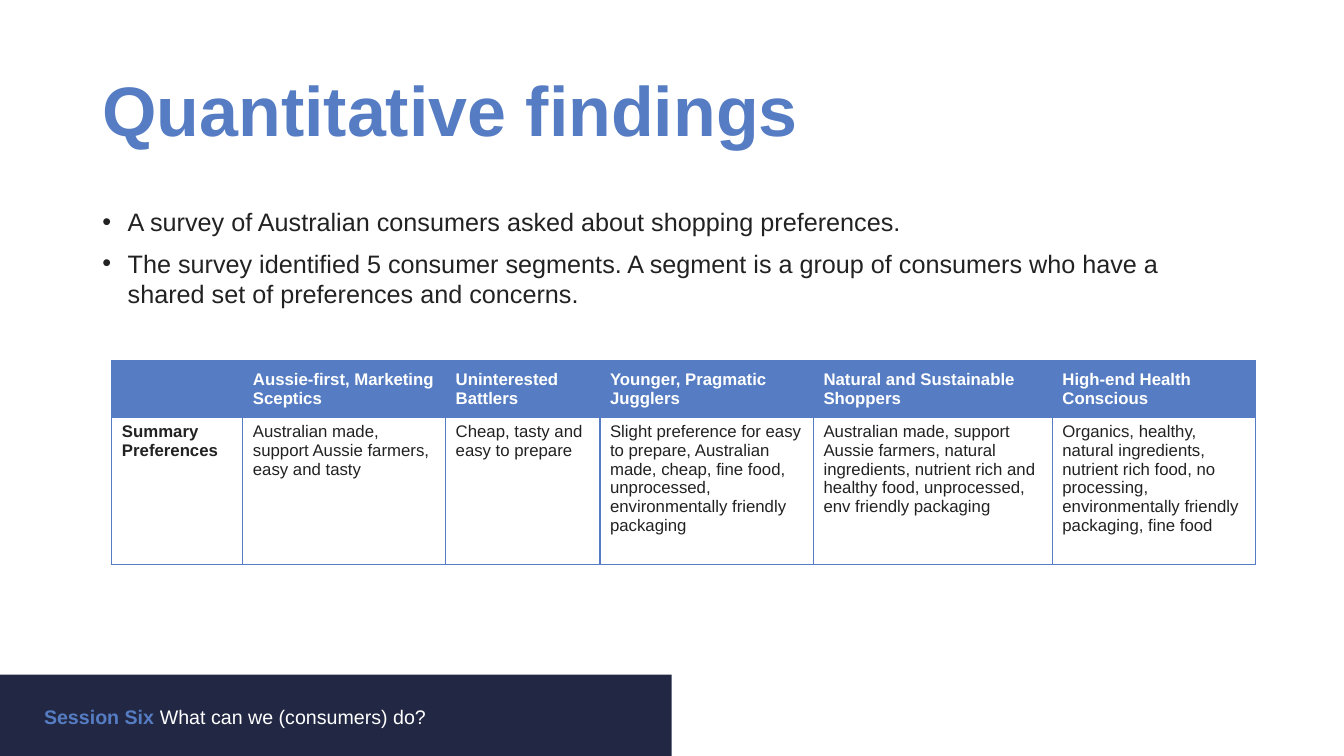
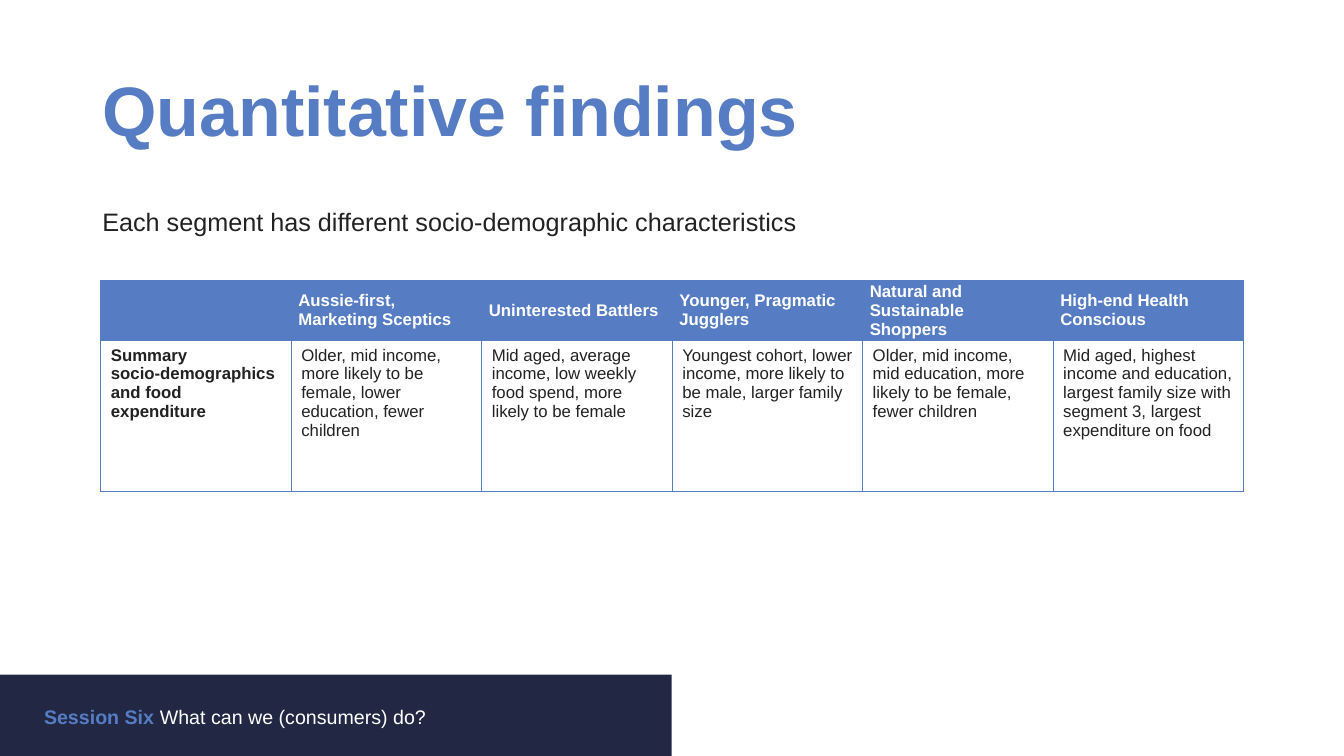
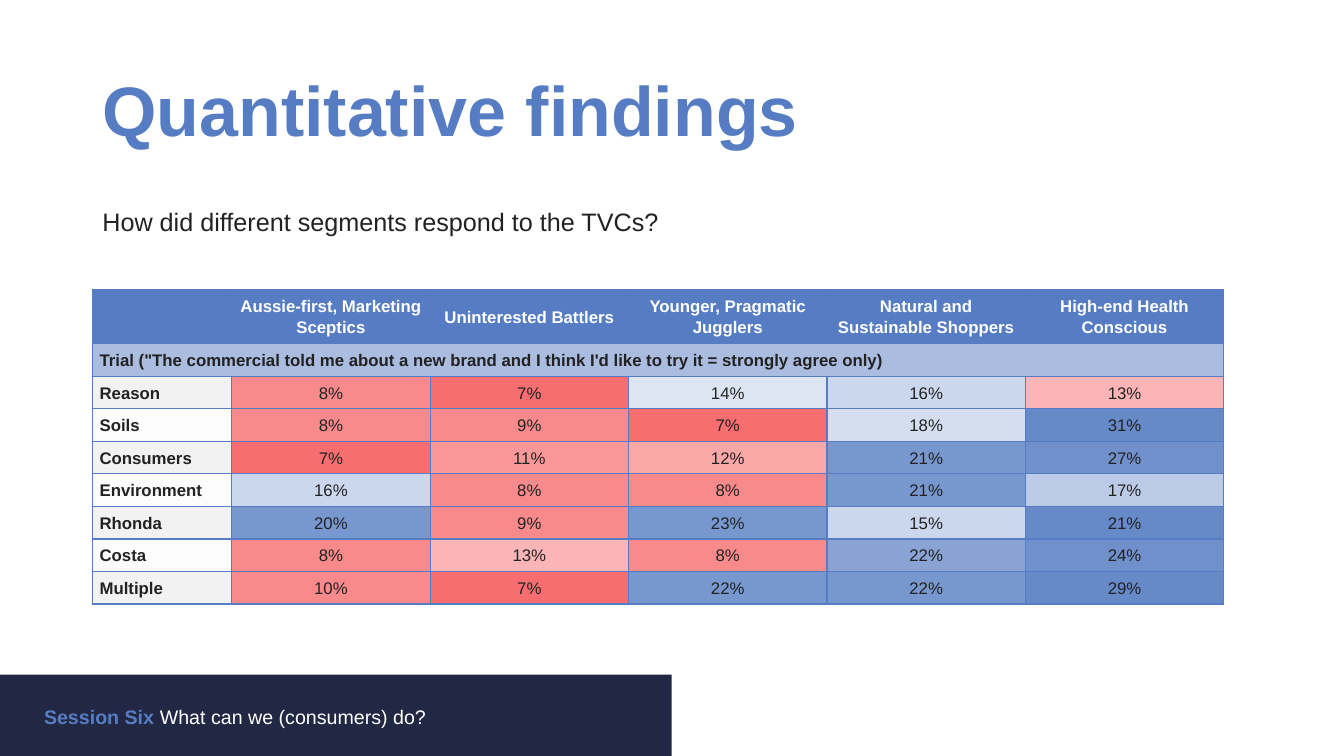
import copy
from dataclasses import dataclass
from typing import NamedTuple, Optional

import pptx
import pptx.dml.color
import pptx.enum.shapes
import pptx.enum.text
import pptx.oxml
import pptx.oxml.ns
import pptx.util
from lxml import etree

Cm = pptx.util.Cm
Pt = pptx.util.Pt
qn = pptx.oxml.ns.qn
ANCHOR = pptx.enum.text.MSO_ANCHOR
ALIGN = pptx.enum.text.PP_ALIGN


# Theme: colours, font and type sizes
@dataclass(frozen=True)
class Theme:
    blue: str = "567DC3"
    navy: str = "222844"
    red: str = "F86D6F"
    grey: str = "F2F2F2"
    ink: str = "222222"
    white: str = "FFFFFF"
    font: str = "Arial"
    title: int = 50
    body: int = 18
    footer: int = 14
    cell: int = 12
    border: int = 1


THEME = Theme()


class Box(NamedTuple):
    left: float
    top: float
    width: float
    height: float


class Fill(NamedTuple):
    color: str
    alpha: int = 100


@dataclass(frozen=True)
class Cell:
    text: str = ""
    fill: Optional[Fill] = None
    color: str = THEME.ink
    bold: bool = False
    centred: bool = False
    middle: bool = False
    tight: bool = False
    spacing: float = 1.0
    span: int = 1


@dataclass(frozen=True)
class Grid:
    left: float
    top: float
    cols: list[float]
    rows: list[float]
    cells: list[list[Cell]]


@dataclass(frozen=True)
class Page:
    body: list[str]
    grid: Grid
    bulleted: bool = False


# Text helpers
def style_run(r, size: int, color: str, bold: bool = False) -> None:
    r.font.name = THEME.font
    r.font.size = Pt(size)
    r.font.bold = bold
    r.font.color.rgb = pptx.dml.color.RGBColor.from_string(color)


def add_text_frame(slide, box: Box):
    sp = slide.shapes.add_textbox(*map(Cm, box))
    tf = sp.text_frame
    tf.word_wrap = True
    return tf


def add_bullet(p) -> None:
    pPr = p._p.get_or_add_pPr()
    pPr.set("marL", str(Cm(0.64)))
    pPr.set("indent", str(-Cm(0.64)))
    etree.SubElement(pPr, qn("a:buFont")).set("typeface", THEME.font)
    etree.SubElement(pPr, qn("a:buChar")).set("char", "•")


# Parts shared by all slides
def add_footer(slide) -> None:
    sp = slide.shapes.add_shape(
        pptx.enum.shapes.MSO_SHAPE.RECTANGLE, Cm(0), Cm(17), Cm(16.93), Cm(2.05))
    sp.shadow.inherit = False
    sp.fill.solid()
    sp.fill.fore_color.rgb = pptx.dml.color.RGBColor.from_string(THEME.navy)
    sp.line.fill.background()
    p = add_text_frame(slide, Box(0.86, 17.65, 12.65, 0.86)).paragraphs[0]
    for text, color, bold in (("Session Six ", THEME.blue, True),
                              ("What can we (consumers) do?", THEME.white, False)):
        r = p.add_run()
        r.text = text
        style_run(r, THEME.footer, color, bold)


def add_title(slide, text: str) -> None:
    tf = add_text_frame(slide, Box(2.33, 1.02, 29.21, 3.68))
    tf.vertical_anchor = ANCHOR.MIDDLE
    p = tf.paragraphs[0]
    p.text = text
    p.line_spacing = 0.9
    style_run(p.runs[0], THEME.title, THEME.blue, True)


def add_body(slide, lines: list[str], bulleted: bool) -> None:
    tf = add_text_frame(slide, Box(2.33, 5.08, 29.21, 3))
    tf.text = "\n".join(lines)
    for i, p in enumerate(tf.paragraphs):
        if i:
            p.space_before = Pt(8)
        if bulleted:
            add_bullet(p)
        style_run(p.runs[0], THEME.body, THEME.ink)


# Tables
def set_borders(tc) -> None:
    tcPr = tc.get_or_add_tcPr()
    for side in ("a:lnL", "a:lnR", "a:lnT", "a:lnB"):
        ln = etree.SubElement(tcPr, qn(side), w=str(Pt(THEME.border)))
        solid = etree.SubElement(ln, qn("a:solidFill"))
        etree.SubElement(solid, qn("a:srgbClr"), val=THEME.blue)


def set_fill(cell, fill: Optional[Fill]) -> None:
    if fill is None:
        cell.fill.background()
        return
    cell.fill.solid()
    cell.fill.fore_color.rgb = pptx.dml.color.RGBColor.from_string(fill.color)
    if fill.alpha < 100:
        clr = cell._tc.tcPr.find(qn("a:solidFill")).find(qn("a:srgbClr"))
        etree.SubElement(clr, qn("a:alpha"), val=str(fill.alpha * 1000))


def fill_cell(cell, data: Cell) -> None:
    set_borders(cell._tc)
    set_fill(cell, data.fill)
    if data.tight:
        cell.margin_left = cell.margin_right = Cm(0.18)
        cell.margin_top = cell.margin_bottom = Cm(0)
    if data.middle:
        cell.vertical_anchor = ANCHOR.MIDDLE
    if not data.text:
        return
    cell.text_frame.text = data.text
    p = cell.text_frame.paragraphs[0]
    p.alignment = ALIGN.CENTER if data.centred else ALIGN.LEFT
    p.line_spacing = data.spacing
    p.space_after = Pt(3)
    for r in p.runs:
        style_run(r, THEME.cell, data.color, data.bold)
    # Line breaks take the size of the text around them
    for br in p._p.findall(qn("a:br")):
        br.insert(0, copy.deepcopy(p.runs[0]._r.rPr))


def add_grid(slide, grid: Grid) -> None:
    frame = slide.shapes.add_table(
        len(grid.rows), len(grid.cols), Cm(grid.left), Cm(grid.top),
        Cm(sum(grid.cols)), Cm(sum(grid.rows)))
    table = frame.table
    table.first_row = table.horz_banding = False
    for col, width in zip(table.columns, grid.cols):
        col.width = Cm(width)
    for row, height in zip(table.rows, grid.rows):
        row.height = Cm(height)
    for i, row in enumerate(grid.cells):
        for j, data in enumerate(row):
            fill_cell(table.cell(i, j), data)
        if row[0].span > 1:
            table.cell(i, 0).merge(table.cell(i, row[0].span - 1))


# Table content
SEGMENTS = ["Aussie-first, Marketing Sceptics", "Uninterested Battlers",
            "Younger, Pragmatic Jugglers", "Natural and Sustainable Shoppers",
            "High-end Health Conscious"]


def header(tight: bool = False, centred: bool = False, spacing: float = 1.0) -> list[Cell]:
    return [Cell(text, Fill(THEME.blue), THEME.white, bold=True, centred=centred,
                 middle=True, tight=tight, spacing=spacing)
            for text in ["", *SEGMENTS]]


def summary(label: str, texts: list[str]) -> list[Cell]:
    return [Cell(label, bold=True), *map(Cell, texts)]


def response_cell(text: str, fill: Fill, label: bool = False, span: int = 1) -> Cell:
    return Cell(text, fill, bold=label, centred=not label, middle=True, tight=True,
                spacing=1.07, span=span)


# Per advert: (percentage, shade strength); negative shades are red, positive blue
RESPONSES = {
    "Reason": [(8, -80), (7, -100), (14, 20), (16, 30), (13, -50)],
    "Soils": [(8, -80), (9, -80), (7, -100), (18, 25), (31, 90)],
    "Consumers": [(7, -100), (11, -70), (12, -60), (21, 80), (27, 85)],
    "Environment": [(16, 30), (8, -80), (8, -80), (21, 80), (17, 40)],
    "Rhonda": [(20, 80), (9, -80), (23, 80), (15, 30), (21, 90)],
    "Costa": [(8, -80), (13, -50), (8, -80), (22, 70), (24, 85)],
    "Multiple": [(10, -80), (7, -100), (22, 80), (22, 80), (29, 90)],
}


def response_rows() -> list[list[Cell]]:
    band = Fill(THEME.blue, 50)
    question = ("Trial (\"The commercial told me about a new brand and "
                "I think I'd like to try it = strongly agree only)")
    rows = [[response_cell(question, band, label=True, span=6),
             *[response_cell("", band)] * 5]]
    for i, (name, values) in enumerate(RESPONSES.items()):
        label_fill = Fill(THEME.grey, 20 if i % 2 else 100)
        rows.append([response_cell(name, label_fill, label=True)] + [
            response_cell(f"{pct}%", Fill(THEME.red if shade < 0 else THEME.blue, abs(shade)))
            for pct, shade in values])
    return rows


PAGES = [
    Page(["A survey of Australian consumers asked about shopping preferences.",
          "The survey identified 5 consumer segments. A segment is a group of consumers "
          "who have a shared set of preferences and concerns."],
         Grid(2.82, 9.09, [3.3, 5.11, 3.89, 5.38, 6.02, 5.11], [1.42, 3.71],
              [header(), summary("Summary Preferences", [
                  "Australian made, support Aussie farmers, easy and tasty",
                  "Cheap, tasty and easy to prepare",
                  "Slight preference for easy to prepare, Australian made, cheap, "
                  "fine food, unprocessed, environmentally friendly packaging",
                  "Australian made, support Aussie farmers, natural ingredients, "
                  "nutrient rich and healthy food, unprocessed, env friendly packaging",
                  "Organics, healthy, natural ingredients, nutrient rich food, "
                  "no processing, environmentally friendly packaging, fine food"])]),
         bulleted=True),
    Page(["Each segment has different socio-demographic characteristics"],
         Grid(2.54, 7.06, [4.8] * 6, [1.42, 3.79],
              [header(tight=True),
               summary("Summary\vsocio-demographics and food expenditure", [
                   "Older, mid income, more likely to be female, lower education, "
                   "fewer children",
                   "Mid aged, average income, low weekly food spend, "
                   "more likely to be female",
                   "Youngest cohort, lower income, more likely to be male, "
                   "larger family size",
                   "Older, mid income, mid education, more likely to be female, "
                   "fewer children",
                   "Mid aged, highest income and education, largest family size "
                   "with segment 3, largest expenditure on food"])])),
    Page(["How did different segments respond to the TVCs?"],
         Grid(2.33, 7.29, [3.51] + [5] * 5, [1.37] + [0.82] * 8,
              [header(tight=True, centred=True, spacing=1.07), *response_rows()])),
]


def main() -> None:
    prs = pptx.Presentation()
    prs.slide_width, prs.slide_height = Cm(33.87), Cm(19.05)
    for page in PAGES:
        slide = prs.slides.add_slide(prs.slide_layouts[6])
        add_footer(slide)
        add_title(slide, "Quantitative findings")
        add_body(slide, page.body, page.bulleted)
        add_grid(slide, page.grid)
    prs.save("out.pptx")


if __name__ == "__main__":
    main()
